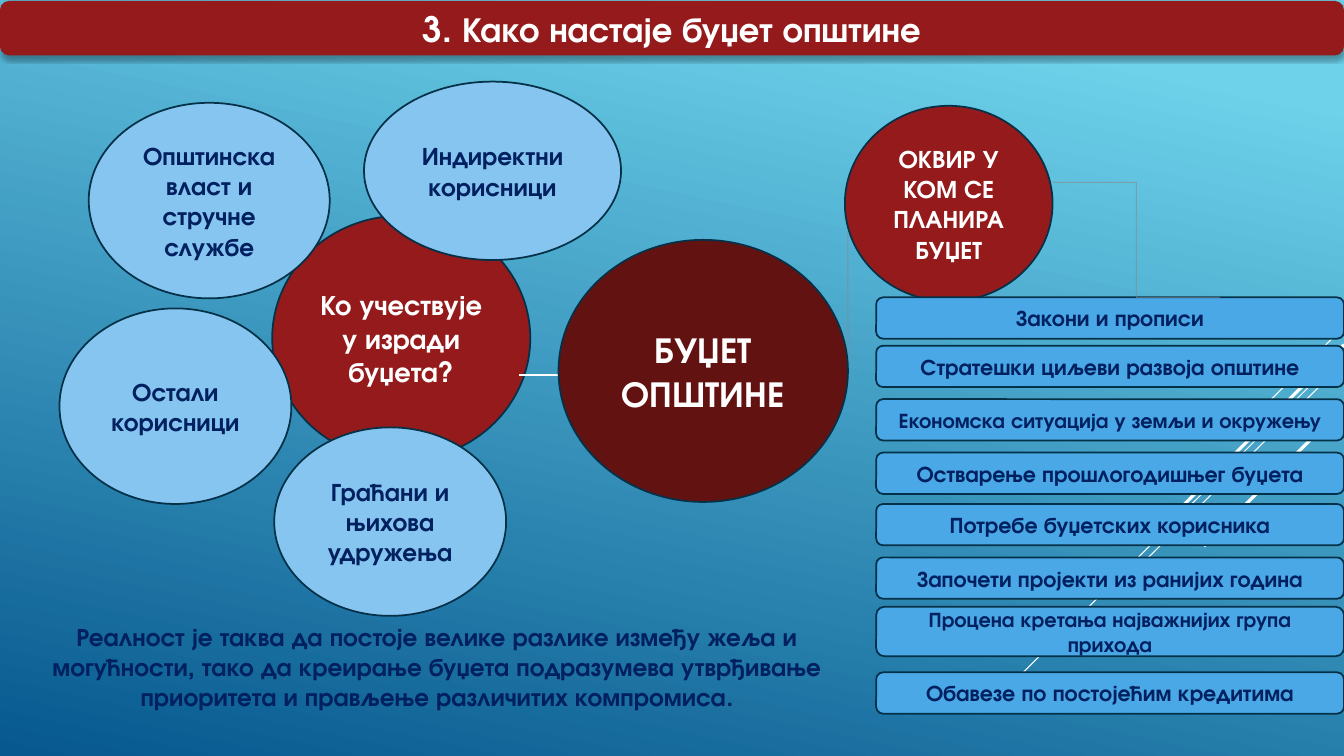
from lxml import etree
from pptx import Presentation
from pptx.dml.color import RGBColor
from pptx.enum.shapes import MSO_CONNECTOR, MSO_SHAPE
from pptx.enum.text import MSO_ANCHOR, PP_ALIGN
from pptx.oxml.ns import qn
from pptx.util import Inches, Pt

STRAIGHT = MSO_CONNECTOR.STRAIGHT
ELBOW = MSO_CONNECTOR.ELBOW
CIRCLE = MSO_SHAPE.FLOWCHART_CONNECTOR
ROUNDED = MSO_SHAPE.ROUNDED_RECTANGLE
CENTER = PP_ALIGN.CENTER
MIDDLE = MSO_ANCHOR.MIDDLE

FONT = "TeX Gyre Adventor"
WHITE = "FFFFFF"
NAVY = "002060"
RED = "941A1B"
DARK_RED = "631212"
PALE_BLUE = "86C5EF"
ROW_BLUE = "4AA8E7"
OUTLINE = "043148"
GRAY = "898989"


def color(value):
    return RGBColor.from_string(value)


def set_text(shape, text, size, text_color):
    frame = shape.text_frame
    frame.word_wrap = True
    paragraph = frame.paragraphs[0]
    paragraph.text = text
    paragraph.alignment = CENTER
    font = paragraph.font
    font.name = FONT
    font.size = Pt(size)
    font.bold = True
    font.color.rgb = color(text_color)


def add_label(slide, kind, box, fill, text, size, text_color, outline=OUTLINE):
    shape = slide.shapes.add_shape(kind, *map(Inches, box))
    shape.shadow.inherit = False
    shape.fill.solid()
    shape.fill.fore_color.rgb = color(fill)
    if outline:
        shape.line.color.rgb = color(outline)
        shape.line.width = Pt(1.25)
    else:
        shape.line.fill.background()
    shape.text_frame.vertical_anchor = MIDDLE
    set_text(shape, text, size, text_color)
    return shape


def add_line(slide, kind, start, end, line_color, width=0.75, opacity=None):
    connector = slide.shapes.add_connector(kind, *map(Inches, start + end))
    connector.line.color.rgb = color(line_color)
    connector.line.width = Pt(width)
    properties = connector._element.spPr
    etree.SubElement(properties, qn("a:effectLst"))
    if opacity:
        fill = properties.find(".//" + qn("a:srgbClr"))
        etree.SubElement(fill, qn("a:alpha"), val=str(opacity * 1000))
    return connector


def paint_background(slide):
    fill = slide.background.fill
    fill.gradient()
    fill.gradient_angle = 258
    stops = ((0.1, "6ED2EB"), (1, "06588E"))
    for stop, (position, stop_color) in zip(fill.gradient_stops, stops):
        stop.position = position
        stop.color.rgb = color(stop_color)


def add_diagonals(slide, right):
    for top, length, width in (
        (3.24, 1, 0.75),
        (3.49, 3.26, 0.75),
        (3.59, 2.07, 0.75),
        (3.42, 1.91, 2.25),
        (4.03, 1.39, 2.25),
    ):
        add_line(slide, STRAIGHT, (right, top), (right - length, top + length), WHITE, width)


def add_title(slide, box):
    title = add_label(slide, ROUNDED, box, RED, "3. Како настаје буџет општине", 25, WHITE, None)
    effects = title._element.spPr.find(qn("a:effectLst"))
    shadow = etree.SubElement(
        effects, qn("a:outerShdw"),
        blurRad=str(Pt(3.5)), dist=str(Pt(2.2)), dir="5400000", rotWithShape="0",
    )
    shadow_color = etree.SubElement(shadow, qn("a:srgbClr"), val="000000")
    etree.SubElement(shadow_color, qn("a:alpha"), val="32000")


def add_note(slide, box):
    note = slide.shapes.add_textbox(*map(Inches, box))
    set_text(
        note,
        "Реалност је таква да постоје велике разлике између жеља и могућности, "
        "тако да креирање буџета подразумева утврђивање приоритета и прављење "
        "различитих компромиса.",
        18, NAVY,
    )
    note.text_frame.paragraphs[0].space_after = Pt(6)


def add_participants(slide, left, top):
    add_label(slide, CIRCLE, (left + 2.11, top + 1.33, 2.56, 2.43), RED,
              "Ко учествује у изради буџета?", 20, WHITE)
    for x, y, width, height, text in (
        (0.29, 0.21, 2.39, 1.94, "Општинска власт и стручне службе"),
        (2.13, 3.43, 2.3, 1.87, "Граћани и њихова удружења"),
        (3.02, 0, 2.55, 1.77, "Индиректни корисници"),
        (0, 2.25, 2.3, 1.94, "Остали корисници"),
    ):
        add_label(slide, CIRCLE, (left + x, top + y, width, height), PALE_BLUE, text, 18, NAVY)


def add_framework(slide, left, top):
    add_label(slide, CIRCLE, (left, top, 2.06, 1.94), RED,
              "ОКВИР У КОМ СЕ ПЛАНИРА БУЏЕТ", 18, WHITE)
    corner = add_line(slide, ELBOW, (left - 0.19, top + 2.66), (left + 0.03, top + 1.25),
                      GRAY, opacity=60)
    corner._element.spPr.find(qn("a:prstGeom")).set("prst", "bentConnector2")
    for y, height, size, text in (
        (1.9, 0.41, 16, "Закони и прописи"),
        (2.38, 0.41, 16, "Стратешки циљеви развоја општине"),
        (2.91, 0.41, 15, "Економска ситуација у земљи и окружењу"),
        (3.44, 0.41, 16, "Остварење прошлогодишњег буџета"),
        (3.95, 0.41, 16, "Потребе буџетских корисника"),
        (4.48, 0.41, 16, "Започети пројекти из ранијих година"),
        (4.97, 0.49, 15, "Процена кретања најважнијих група прихода"),
        (5.62, 0.41, 16, "Обавезе по постојећим кредитима"),
    ):
        add_label(slide, ROUNDED, (left + 0.31, top + y, 4.64, height), ROW_BLUE, text, size, NAVY)
    add_line(slide, ELBOW, (left + 2.06, top + 0.76), (left + 3.72, top + 1.9), GRAY, opacity=60)


def main():
    presentation = Presentation()
    presentation.slide_width = Inches(13.33)
    presentation.slide_height = Inches(7.5)
    slide = presentation.slides.add_slide(presentation.slide_layouts[6])
    paint_background(slide)
    add_diagonals(slide, 13.33)
    add_note(slide, (0.19, 6.11, 8.29, 1.19))
    add_title(slide, (0, 0.01, 13.33, 0.54))
    add_participants(slide, 0.59, 0.81)
    add_line(slide, ELBOW, (7.71, 3.44), (5.15, 3.72), WHITE)
    add_framework(slide, 8.38, 1.05)
    add_label(slide, CIRCLE, (5.54, 2.38, 2.87, 2.6), DARK_RED, "БУЏЕТ ОПШТИНЕ", 26, WHITE)
    presentation.save("out.pptx")


if __name__ == "__main__":
    main()
